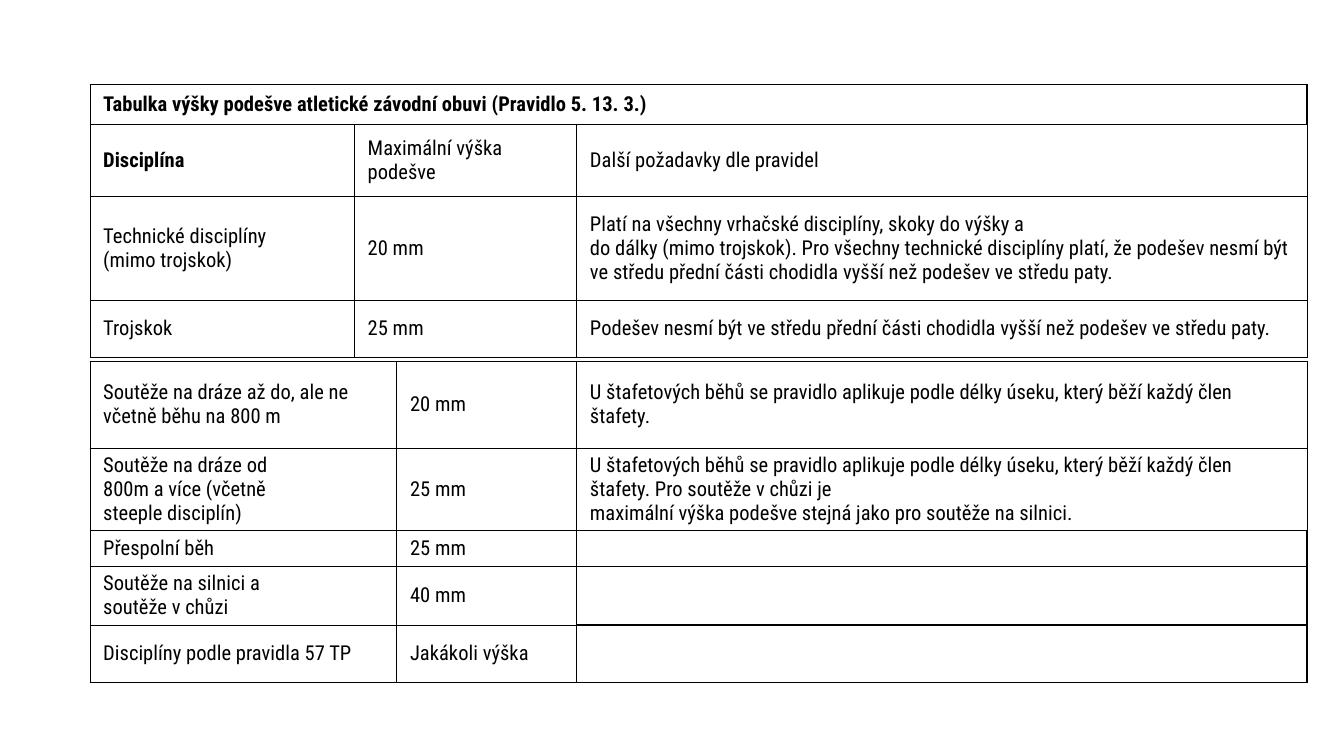
from copy import deepcopy

from lxml import etree
from pptx import Presentation
from pptx.dml.color import RGBColor
from pptx.enum import text
from pptx.oxml.ns import qn
from pptx.util import Cm, Pt

HUES = {"ink": "000000"}
FONT = {"name": "Roboto Condensed", "size": Pt(11)}
CELL = {
    "margin_left": Cm(0.25), "margin_right": Cm(0.25),
    "margin_top": Cm(0.1), "margin_bottom": Cm(0.1),
    "vertical_anchor": text.MSO_ANCHOR.MIDDLE,
}
LEFT = 1.7
BOLD = ("Tabulka výšky podešve atletické závodní obuvi (Pravidlo 5. 13. 3.)", "Disciplína")
FIELD = {
    "top": 1.6, "cols": [5, 4.2, 13.8], "rows": [0.76, 1.35, 1.96, 1.08],
    "cells": [
        [BOLD[0], "", ""],
        [BOLD[1], "Maximální výška\npodešve", "Další požadavky dle pravidel"],
        ["Technické disciplíny\n(mimo trojskok)", "20 mm",
         "Platí na všechny vrhačské disciplíny, skoky do výšky a\n"
         "do dálky (mimo trojskok). Pro všechny technické disciplíny platí, že podešev "
         "nesmí být ve středu přední části chodidla vyšší než podešev ve středu paty."],
        ["Trojskok", "25 mm",
         "Podešev nesmí být ve středu přední části chodidla vyšší než podešev ve středu paty."],
    ],
}
RELAY = ("U štafetových běhů se pravidlo aplikuje podle délky úseku, "
         "který běží každý člen štafety.")
TRACK = {
    "top": 6.83, "cols": [5.8, 3.4, 13.8], "rows": [1.64, 1.54, 0.68, 1.08, 1.08],
    "cells": [
        ["Soutěže na dráze až do, ale ne včetně běhu na 800 m", "20 mm", RELAY],
        ["Soutěže na dráze od\n800m a více (včetně\nsteeple disciplín)", "25 mm",
         RELAY + " Pro soutěže v chůzi je\n"
         "maximální výška podešve stejná jako pro soutěže na silnici."],
        ["Přespolní běh", "25 mm", ""],
        ["Soutěže na silnici a\nsoutěže v chůzi", "40 mm", ""],
        ["Disciplíny podle pravidla 57 TP", "Jakákoli výška", ""],
    ],
}


def style(item, form):
    """Set attributes of an item from a dict."""
    for key, val in form.items():
        setattr(item, key, val)


def edge(cell, sides):
    """Draw the cell borders, given as side to width in points."""
    props = cell._tc.get_or_add_tcPr()
    for spot, (side, wide) in enumerate(sides.items()):
        line = etree.Element(qn("a:ln" + side), w=str(Pt(wide)))
        fill = etree.SubElement(line, qn("a:solidFill"))
        etree.SubElement(fill, qn("a:srgbClr"), val=HUES["ink"])
        props.insert(spot, line)


def write(cell, words):
    """Fill a cell with text in the table font."""
    style(cell, CELL)
    para = cell.text_frame.paragraphs[0]
    para.text = words
    for run in para.runs:
        style(run.font, FONT)
        run.font.bold = words in BOLD
        run.font.color.rgb = RGBColor.from_string(HUES["ink"])
    for gap in para._p.findall(qn("a:br")):
        gap.insert(0, deepcopy(para.runs[0]._r.rPr))
    etree.SubElement(para._p, qn("a:endParaRPr"), sz="1100")


def grid(slide, data):
    """Add one table with its text and borders."""
    cols, rows, cells = data["cols"], data["rows"], data["cells"]
    frame = slide.shapes.add_table(len(rows), len(cols), Cm(LEFT), Cm(data["top"]),
                                   Cm(sum(cols)), Cm(sum(rows)))
    table = frame.table
    style(table, {"first_row": False, "horz_banding": False})
    for col, wide in zip(table.columns, cols):
        col.width = Cm(wide)
    for row, high in zip(table.rows, rows):
        row.height = Cm(high)
    for r, line in enumerate(cells):
        head = line[0] == BOLD[0]
        for c, words in enumerate(line):
            cell = table.cell(r, c)
            write(cell, words)
            cell.fill.background()
            bare = not words and not head
            over = r > 0 and not cells[r - 1][c] and bare
            edge(cell, {"L": 0.5, "R": 1 if head or bare else 0.5,
                        "T": 1 if over else 0.5, "B": 1 if bare else 0.5})
        if head:
            table.cell(r, 0).merge(table.cell(r, len(cols) - 1))


def main():
    """Build the slide and save it."""
    deck = Presentation()
    style(deck, {"slide_width": Cm(25.4), "slide_height": Cm(14.29)})
    slide = deck.slides.add_slide(deck.slide_layouts[6])
    for data in (FIELD, TRACK):
        grid(slide, data)
    deck.save("out.pptx")


if __name__ == "__main__":
    main()
